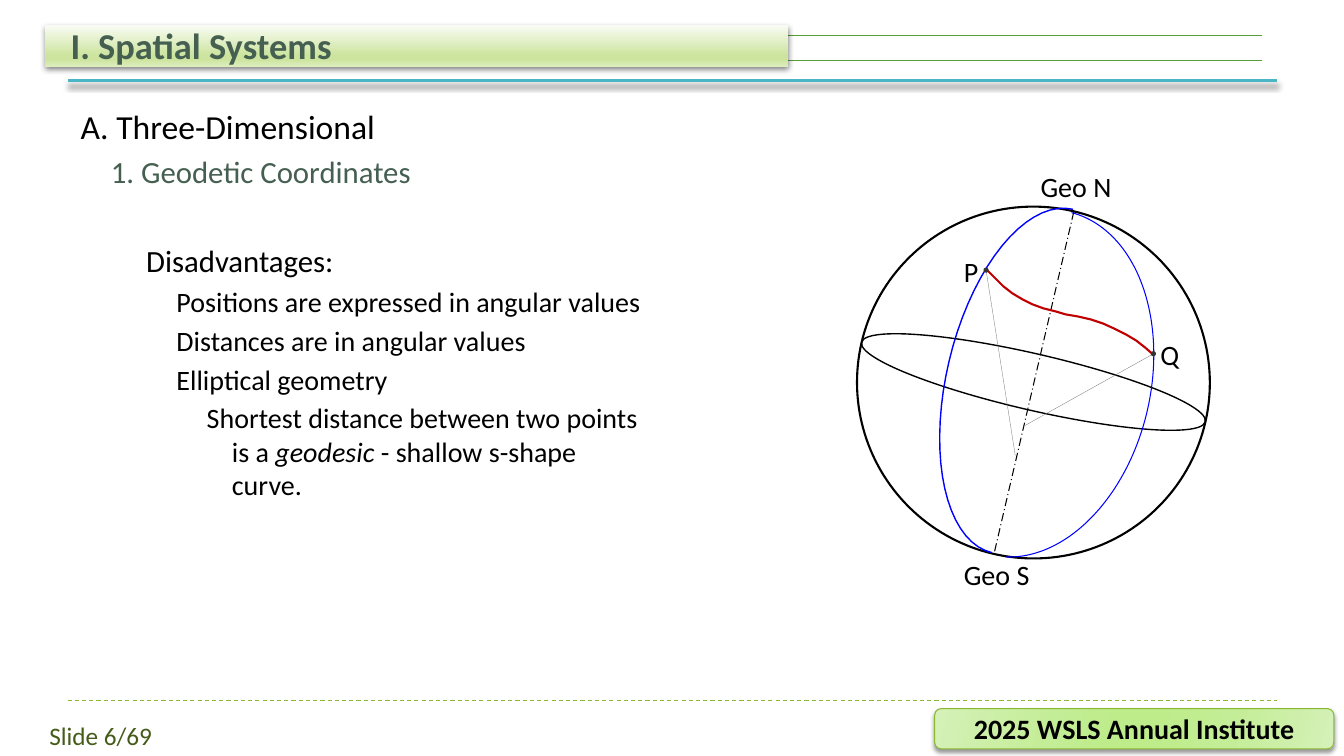
from math import cos, pi, radians, sin

from lxml.etree import SubElement
from pptx import Presentation
from pptx.dml.color import RGBColor
from pptx.enum.dml import MSO_LINE_DASH_STYLE as DASH
from pptx.enum.shapes import MSO_CONNECTOR, MSO_SHAPE as SHAPE
from pptx.enum.text import MSO_ANCHOR as ANCHOR, MSO_AUTO_SIZE as AUTO, PP_ALIGN as ALIGN
from pptx.oxml.ns import qn
from pptx.util import Inches, Pt

BLACK = RGBColor(0x00, 0x00, 0x00)
SLATE = RGBColor(0x45, 0x5F, 0x51)
OLIVE = RGBColor(0x45, 0x5C, 0x19)
LIME = RGBColor(0x8A, 0xB8, 0x33)
GREEN = RGBColor(0x54, 0x9E, 0x39)
TEAL = RGBColor(0x4A, 0xB5, 0xC4)
BLUE = RGBColor(0x00, 0x00, 0xFF)
RED = RGBColor(0xC0, 0x00, 0x00)
GRAY = RGBColor(0x80, 0x80, 0x80)
DARK = RGBColor(0x33, 0x33, 0x33)
FONT = "Calibri"

prs = Presentation()
prs.slide_width, prs.slide_height = Inches(13.33), Inches(7.5)
s = prs.slides.add_slide(prs.slide_layouts[1])


def set_shadow(sp, alpha=0, blur=0, dist=0):
    """Replace the theme shadow by a downward one, or by none when alpha is 0."""
    sp_pr = sp.element.spPr
    effects = sp_pr.find(qn("a:effectLst"))
    if effects is None:
        effects = SubElement(sp_pr, qn("a:effectLst"))
    if alpha:
        shadow = SubElement(effects, qn("a:outerShdw"), blurRad=str(Pt(blur)),
                            dist=str(Pt(dist)), dir="5400000", rotWithShape="0")
        color = SubElement(shadow, qn("a:srgbClr"), val="000000")
        SubElement(color, qn("a:alpha"), val=str(alpha * 1000))


def add_line(x1, y1, x2, y2, color, width, dash=None, shadow=()):
    line = s.shapes.add_connector(MSO_CONNECTOR.STRAIGHT, Inches(x1), Inches(y1),
                                  Inches(x2), Inches(y2))
    line.line.color.rgb = color
    line.line.width = Pt(width)
    if dash:
        line.line.dash_style = dash
    set_shadow(line, *shadow)


# Header and footer
add_line(0.67, 6.95, 12.67, 6.95, LIME, 0.75, DASH.DASH)
add_line(0.67, 0.8, 12.67, 0.8, TEAL, 2, shadow=(40, 4, 3.4))
for y in (0.35, 0.6):
    add_line(0.73, y, 12.52, y, GREEN, 0.75)

banners = [
    (SHAPE.ROUNDED_RECTANGLE, (9.27, 7.03, 3.96, 0.4), 16, (40, 3, 2),
     [(0, "D5F1B8"), (30, "C4ED97"), (45, "BEEC8A"), (55, "BEEC8A"),
      (73, "C4ED97"), (100, "D5F1B8")], "2025 WSLS Annual Institute"),
    (SHAPE.RECTANGLE, (0.45, 0.25, 7.37, 0.41), 90, (50, 4, 2),
     [(0, "F9FCF4"), (74, "CCE49E"), (83, "CCE49E"), (100, "DDEDBE")], ""),
]
for kind, box, angle, shadow, stops, text in banners:
    sp = s.shapes.add_shape(kind, *map(Inches, box))
    sp.fill.gradient()
    grad = sp.element.spPr.find(qn("a:gradFill"))
    grad.find(qn("a:lin")).set("ang", str(angle * 60000))
    stop_list = grad.find(qn("a:gsLst"))
    for old in list(stop_list):
        stop_list.remove(old)
    for pos, color in stops:
        stop = SubElement(stop_list, qn("a:gs"), pos=str(pos * 1000))
        SubElement(stop, qn("a:srgbClr"), val=color)
    if text:
        sp.line.color.rgb = LIME
        sp.line.width = Pt(0.75)
        tf = sp.text_frame
        tf.text = text
        tf.vertical_anchor = ANCHOR.MIDDLE
        p = tf.paragraphs[0]
        p.alignment = ALIGN.CENTER
        f = p.runs[0].font
        f.name, f.size, f.bold, f.color.rgb = FONT, Pt(20), True, BLACK
    else:
        sp.line.fill.background()
    sp.shadow.inherit = False
    set_shadow(sp, *shadow)

# Title and outline, in front of the banner
title, body = s.shapes.title, s.placeholders[1]
for holder, box in ((title, (0.6, 0.2, 12, 0.51)), (body, (0.7, 1, 5.85, 5.9))):
    holder.left, holder.top, holder.width, holder.height = map(Inches, box)
    holder.element.getparent().append(holder.element)
    holder.text_frame.word_wrap = True
    holder.text_frame.auto_size = AUTO.NONE

title.text_frame.text = "I. Spatial Systems"
title.text_frame.vertical_anchor = ANCHOR.BOTTOM
p = title.text_frame.paragraphs[0]
p.alignment = ALIGN.LEFT
f = p.runs[0].font
f.name, f.size, f.bold, f.color.rgb = FONT, Pt(26), True, SLATE

# level, left margin, hanging indent, space before, size, colour, runs
outline = [
    (0, 0.3, 0.3, 0, 24, BLACK, ["A. Three-Dimensional"]),
    (1, 0.6, 0.3, 5, 22, SLATE, ["1. Geodetic Coordinates"]),
    (2, 0.9, 0.25, 37, 22, BLACK, ["Disadvantages:"]),
    (3, 1.2, 0.25, 4, 20, BLACK, ["Positions are expressed in angular values"]),
    (3, 1.2, 0.25, 4, 20, BLACK, ["Distances are in angular values"]),
    (3, 1.2, 0.25, 4, 20, BLACK, ["Elliptical geometry"]),
    (4, 1.5, 0.25, 3, 20, BLACK, ["Shortest distance between two points is a ",
                                  "geodesic", " - shallow s-shape curve."]),
]
tf = body.text_frame
for i, (level, margin, hang, before, size, color, texts) in enumerate(outline):
    p = tf.paragraphs[0] if i == 0 else tf.add_paragraph()
    p.level = level
    p_pr = p._p.get_or_add_pPr()
    p_pr.set("marL", str(Inches(margin)))
    p_pr.set("indent", str(-Inches(hang)))
    SubElement(p_pr, qn("a:buNone"))
    p.space_before = Pt(before)
    for text in texts:
        r = p.add_run()
        r.text = text
        r.font.name, r.font.size, r.font.color.rgb = FONT, Pt(size), color
        r.font.italic = text == "geodesic"

# Ellipsoid: outline, equator, far meridian
TILT = 13
globe = [
    (SHAPE.OVAL, (8.5, 2.05, 3.5, 3.49), BLACK, 1.5),
    (SHAPE.OVAL, (8.5, 3.51, 3.5, 0.56), BLACK, 1),
    (SHAPE.ARC, (9.02, 2.06, 2.39, 3.49), BLUE, 0.75),
]
for kind, box, color, width in globe:
    sp = s.shapes.add_shape(kind, *map(Inches, box))
    sp.rotation = TILT
    sp.fill.background()
    sp.line.color.rgb = color
    sp.line.width = Pt(width)
    sp.shadow.inherit = False
    if kind == SHAPE.ARC:
        sp.adjustments[0], sp.adjustments[1] = 56.99, 161.58
        sp.element.spPr.find(qn("a:xfrm")).set("flipH", "1")

add_line(10.65, 2.1, 9.86, 5.49, BLACK, 0.75, DASH.LONG_DASH_DOT)
add_line(10.07, 4.52, 9.78, 2.68, GRAY, 0.25)
add_line(11.44, 3.51, 10.15, 4.23, GRAY, 0.25)

# Near meridian: half of a tilted ellipse, from south to north
tilt = radians(13.3)
meridian = []
for i in range(37):
    across, down = -0.85 * sin(pi * i / 36), 1.75 * cos(pi * i / 36)
    meridian.append((10.24 + across * cos(tilt) - down * sin(tilt),
                     3.78 + across * sin(tilt) + down * cos(tilt)))
geodesic = [
    (9.79, 2.68), (9.87, 2.76), (9.95, 2.84), (10.04, 2.91), (10.14, 2.97),
    (10.24, 3.02), (10.35, 3.06), (10.47, 3.09), (10.57, 3.12), (10.69, 3.14),
    (10.82, 3.17), (10.94, 3.21), (11.05, 3.26), (11.17, 3.32), (11.27, 3.38),
    (11.36, 3.45), (11.44, 3.52),
]
for points, color, width in ((meridian, BLUE, 1), (geodesic, RED, 1.5)):
    start, *rest = [(Inches(x), Inches(y)) for x, y in points]
    builder = s.shapes.build_freeform(*start)
    builder.add_line_segments(rest, close=False)
    sp = builder.convert_to_shape()
    sp.fill.background()
    sp.line.color.rgb = color
    sp.line.width = Pt(width)
    sp.shadow.inherit = False

DOT = 0.03
for x, y in ((9.78, 2.68), (11.44, 3.51)):
    sp = s.shapes.add_shape(SHAPE.OVAL, Inches(x - DOT / 2), Inches(y - DOT / 2),
                            Inches(DOT), Inches(DOT))
    sp.fill.solid()
    sp.fill.fore_color.rgb = DARK
    sp.line.color.rgb = DARK
    sp.line.width = Pt(1.5)
    sp.shadow.inherit = False

labels = [
    ("Geo N", (10.32, 1.68, 0.71, 0.34), 20, BLACK),
    ("Geo S", (9.56, 5.53, 0.66, 0.34), 20, BLACK),
    ("P", (9.56, 2.53, 0.15, 0.34), 20, BLACK),
    ("Q", (11.51, 3.35, 0.19, 0.34), 20, BLACK),
    ("Slide 6/69", (0.49, 7.15, 1.03, 0.3), 18, OLIVE),
]
for text, box, size, color in labels:
    tf = s.shapes.add_textbox(*map(Inches, box)).text_frame
    tf.margin_left = tf.margin_right = tf.margin_top = tf.margin_bottom = 0
    tf.word_wrap = False
    tf.text = text
    f = tf.paragraphs[0].runs[0].font
    f.name, f.size, f.color.rgb = FONT, Pt(size), color

prs.save("out.pptx")
